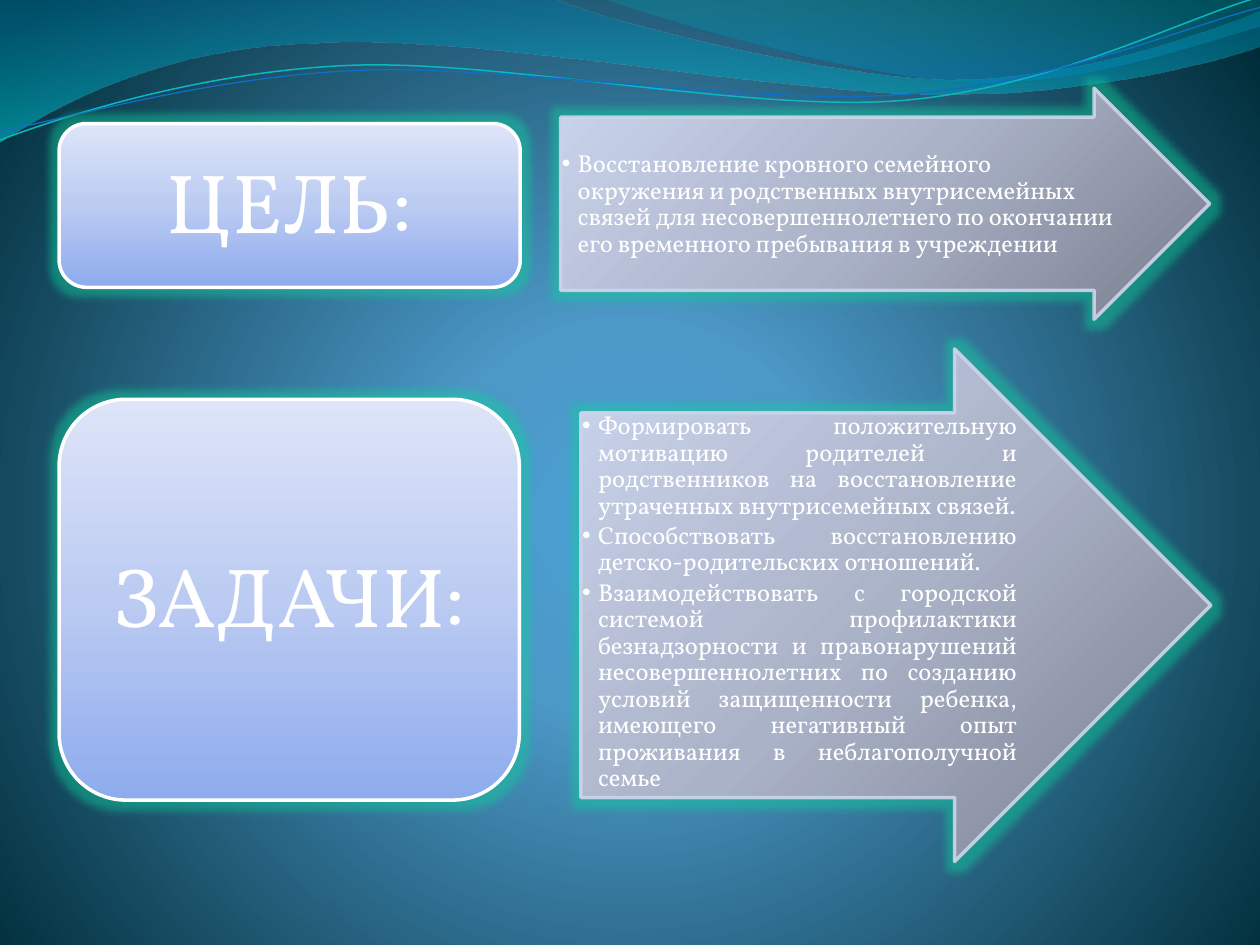
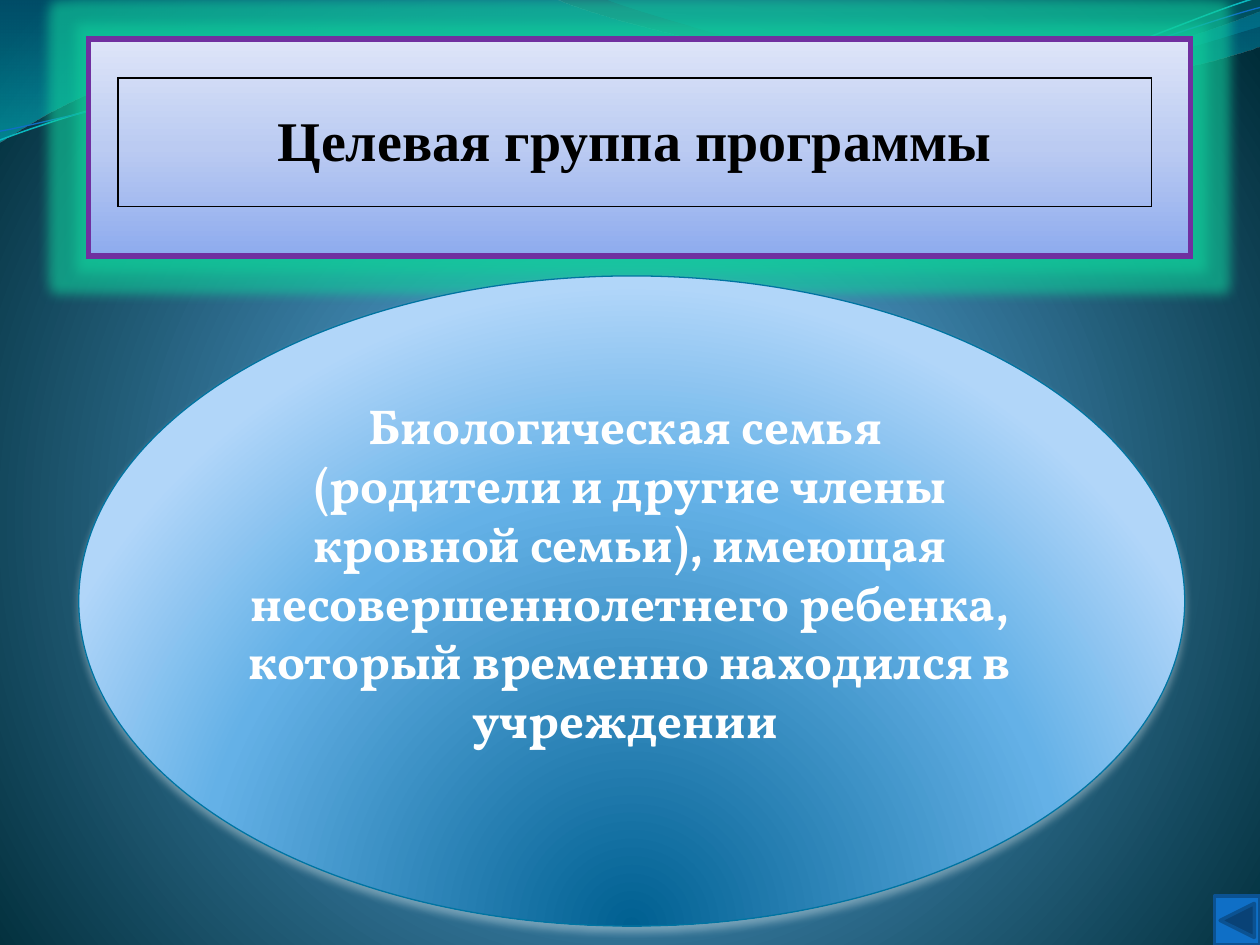
import lxml.etree
import pptx
import pptx.dml.color
import pptx.enum.shapes
import pptx.enum.text
import pptx.oxml.ns
import pptx.util

Pt = pptx.util.Pt
qn = pptx.oxml.ns.qn
KIND = pptx.enum.shapes.MSO_SHAPE
ALIGN = pptx.enum.text.PP_ALIGN
ANCHOR = pptx.enum.text.MSO_ANCHOR
HUES = {
    "white": "FFFFFF", "black": "000000", "violet": "7030A0",
    "blue": "0F6FC6", "navy": "0B5292", "teal": "0AB8BF",
    "rim": "0074A1", "edge": "CCD5EA", "glow": "10CF9B", "shade": "C8DCE4",
    "sky": "4AA0D6", "mid": "4C98C7", "night": "002C38",
    "aqua": "00C6CF", "sea": "00A1A9", "wave": "008BBF",
    "card": "8EABEE", "soft": "BBCBF2", "pale": "DEE5F8",
    "slate": "787D8C", "grey": "AAB2C7", "mist": "CAD4ED",
    "deep": "006091", "azure": "64B1E7", "light": "B1D6F9",
}
FONT = "Vollkorn"
CARD = [(0, "card"), (50, "soft"), (100, "pale")]
STEEL = [(0, "slate"), (50, "grey"), (100, "mist")]
BANDS = [
    ([(0, 0), (317, -0.7), (343, 12, 478, 45.4, 546, 45.4),
      (614, 45.4, 690, 18.7, 720, 6.5), (720.7, 26),
      (708, 32, 626, 54.7, 537, 54), (447, 54, 275, 20, 185, 24.5),
      (93, 26, 33, 60, -0.7, 81.4)],
     [(0, "rim", 45), (100, "aqua", 55)]),
    ([(345, -0.7), (366, 8, 491, 44.6, 553.7, 46.8),
      (616, 49.7, 692, 23, 720, 15), (720, 0)],
     [(0, "sea", 30), (80, "wave", 45)]),
]
LINES = [
    ([(0, 80), (34.6, 67, 113.8, 41, 199.4, 37.4),
      (284.4, 33.8, 427, 64, 513.4, 57.6),
      (599.8, 51, 675.4, 10.8, 718.6, -1.4)], "teal", 0.85),
    ([(0, 75), (33.8, 69, 118, 44, 203.8, 40.3),
      (290, 36.7, 430, 60.5, 516, 54), (602, 48.2, 677.5, 15, 720, 4.3)],
     "blue", 0.75),
]


def color(name):
    return pptx.dml.color.RGBColor.from_string(HUES[name])


def node(host, tag, **attrs):
    return lxml.etree.SubElement(
        host, qn(tag), {key: str(val) for key, val in attrs.items()})


def tint(host, name, alpha=100):
    hue = node(host, "a:srgbClr", val=HUES[name])
    if alpha < 100:
        node(hue, "a:alpha", val=alpha * 1000)


def blend(host, stops, angle=None, focus=None):
    old = host.find(qn("a:noFill"))
    grad = node(host, "a:gradFill", rotWithShape=1)
    items = node(grad, "a:gsLst")
    for pos, *hue in stops:
        tint(node(items, "a:gs", pos=pos * 1000), *hue)
    if focus:
        ring = node(grad, "a:path", path="circle")
        sides = {key: val * 1000 for key, val in zip("ltrb", focus)}
        node(ring, "a:fillToRect", **sides)
    else:
        node(grad, "a:lin", ang=angle * 60000, scaled=0)
    host.replace(old, grad)


def curve(slide, steps, close):
    dots = [(Pt(step[i]), Pt(step[i + 1]))
            for step in steps for i in range(0, len(step), 2)]
    pen = slide.shapes.build_freeform(*dots[0])
    pen.add_line_segments(dots[1:], close=close)
    shape = pen.convert_to_shape()
    parts = iter(list(shape._element.spPr.iter(qn("a:lnTo"))))
    for step in steps[1:]:
        part = next(parts)
        if len(step) == 6:
            bend = lxml.etree.Element(qn("a:cubicBezTo"))
            part.addprevious(bend)
            for piece in (part, next(parts), next(parts)):
                bend.append(piece[0])
                piece.getparent().remove(piece)
    shape.shadow.inherit = False
    shape.fill.background()
    return shape


def scene(deck, slide):
    master = deck.slide_master
    master.background.fill.background()
    base = master._element.cSld.find(qn("p:bg")).find(qn("p:bgPr"))
    blend(base, [(0, "sky"), (25, "mid"), (100, "night")],
          focus=(10, 110, 10, 100))
    waves = []
    for steps, stops in BANDS:
        band = curve(slide, steps, True)
        band.line.fill.background()
        blend(band._element.spPr, stops, angle=90)
        waves.append(band)
    for steps, hue, width in LINES:
        wave = curve(slide, steps, False)
        wave.line.color.rgb = color(hue)
        wave.line.width = Pt(width)
        waves.append(wave)
    for i, wave in enumerate(waves, 20):
        wave._element.nvSpPr.cNvPr.set("id", str(i))
        master.shapes._spTree.append(wave._element)


def block(slide, kind, area, line, width, fill=None, stops=None, angle=None,
          focus=None, glow=0, alpha=45):
    shape = slide.shapes.add_shape(kind, *map(Pt, area))
    shape.shadow.inherit = False
    shape.line.color.rgb = color(line)
    shape.line.width = Pt(width)
    if fill:
        shape.fill.solid()
        shape.fill.fore_color.rgb = color(fill)
    else:
        shape.fill.background()
        blend(shape._element.spPr, stops, angle, focus)
    if glow:
        effects = shape._element.spPr.find(qn("a:effectLst"))
        tint(node(effects, "a:glow", rad=Pt(glow)), "glow", alpha)
    return shape


def write(frame, lines, size, hue="white", font=FONT, bold=False,
          align=ALIGN.CENTER, space=1.0, after=0, bullet=False):
    for i, line in enumerate(lines):
        para = frame.add_paragraph() if i else frame.paragraphs[0]
        para.alignment = align
        para.line_spacing = space
        para.space_before = Pt(0)
        para.space_after = Pt(after)
        run = para.add_run()
        run.text = line
        run.font.size = Pt(size)
        run.font.name = font
        run.font.bold = bold
        run.font.color.rgb = color(hue)
        if bullet:
            props = para._p.get_or_add_pPr()
            props.set("marL", str(Pt(9)))
            props.set("indent", str(-Pt(9)))
            node(props, "a:buChar", char="•")


def inset(frame, left, top, right, bottom):
    frame.word_wrap = True
    frame.auto_size = pptx.enum.text.MSO_AUTO_SIZE.NONE
    frame.margin_left, frame.margin_top = Pt(left), Pt(top)
    frame.margin_right, frame.margin_bottom = Pt(right), Pt(bottom)


def label(slide, area, text):
    card = block(slide, KIND.ROUNDED_RECTANGLE, area, "white", 2,
                 stops=CARD, angle=270, glow=9)
    frame = card.text_frame
    inset(frame, 14, 7.5, 14.5, 7)
    frame.vertical_anchor = ANCHOR.MIDDLE
    write(frame, [text], 48, space=0.9)


def arrow(slide, area, **fill):
    shape = block(slide, KIND.RIGHT_ARROW, area, "edge", 2, stops=STEEL,
                  glow=9, **fill)
    shape.adjustments[0] = 0.75
    shape.adjustments[1] = 0.5
    edge = shape._element.spPr.find(qn("a:ln")).find(qn("a:solidFill"))
    node(edge[0], "a:alpha", val=90000)


def points(slide, index, area, lines, align, top=1):
    holder = slide.placeholders[index]
    holder.left, holder.top, holder.width, holder.height = map(Pt, area)
    slide.shapes._spTree.append(holder._element)
    inset(holder.text_frame, 0.7, top, 0.7, 0.7)
    holder.text_frame.vertical_anchor = ANCHOR.TOP
    write(holder.text_frame, lines, 14, align=align, space=0.9, after=2.1,
          bullet=True)


def banner(slide, area, text):
    table = slide.shapes.add_table(1, 1, *map(Pt, area)).table
    table.first_row = table.horz_banding = False
    cell = table.cell(0, 0)
    cell.vertical_anchor = ANCHOR.MIDDLE
    cell.margin_left = cell.margin_right = Pt(5)
    cell.margin_top = cell.margin_bottom = Pt(0)
    props = cell._tc.get_or_add_tcPr()
    for side in ("a:lnL", "a:lnR", "a:lnT", "a:lnB"):
        tint(node(node(props, side, w=Pt(1)), "a:solidFill"), "black")
    cell.fill.background()
    write(cell.text_frame, [text], 32, hue="black", font="Times New Roman",
          bold=True)


def aims(deck):
    slide = deck.slides.add_slide(deck.slide_layouts[3])
    title = slide.shapes.title._element
    title.getparent().remove(title)
    scene(deck, slide)
    arrow(slide, (320.4, 50.4, 370.8, 132), focus=(100, 100, 0, 0))
    points(slide, 1, (320.4, 67, 321, 99), [
        "Восстановление кровного семейного окружения и родственных "
        "внутрисемейных связей для несовершеннолетнего по окончании его "
        "временного пребывания в учреждении"], ALIGN.LEFT, top=19.5)
    label(slide, (33.8, 70.6, 263.5, 93.6), "ЦЕЛЬ:")
    arrow(slide, (332, 199.4, 360, 293), angle=225)
    points(slide, 2, (332, 235.4, 250, 220), [
        "Формировать положительную мотивацию родителей и родственников на "
        "восстановление утраченных внутрисемейных связей.",
        "Способствовать восстановлению детско-родительских отношений.",
        "Взаимодействовать с городской системой профилактики безнадзорности "
        "и правонарушений несовершеннолетних по созданию условий "
        "защищенности ребенка, имеющего негативный опыт проживания в "
        "неблагополучной семье"], ALIGN.JUSTIFY)
    label(slide, (33.8, 228.2, 263, 229), "ЗАДАЧИ:")


def target(deck):
    slide = deck.slides.add_slide(deck.slide_layouts[6])
    frame = block(slide, KIND.RECTANGLE, (50.4, 22.3, 630, 124), "violet", 3,
                  stops=CARD, angle=270, glow=14, alpha=60)
    node(frame._element.spPr.find(qn("a:ln")), "a:miter", lim=800000)
    block(slide, KIND.ACTION_BUTTON_BACK_OR_PREVIOUS, (694, 512, 26, 28),
          "navy", 2, fill="blue")
    banner(slide, (67.5, 44.6, 590.4, 73.4), "Целевая группа программы")
    oval = block(slide, KIND.OVAL, (45, 157.7, 632, 371.5), "rim", 0.75,
                 stops=[(0, "deep"), (68, "azure"), (100, "light")],
                 focus=(50, 130, 50, -30))
    effects = oval._element.spPr.find(qn("a:effectLst"))
    shade = node(effects, "a:outerShdw", blurRad=Pt(4.5), dist=Pt(3),
                 dir=90 * 60000, rotWithShape=0)
    tint(shade, "shade", 48)
    area = (123.8, 222.5, 472.3, 211)
    words = slide.shapes.add_textbox(*map(Pt, area)).text_frame
    inset(words, 7.2, 3.6, 7.2, 3.6)
    write(words, [
        "Биологическая семья ",
        "(родители и другие члены кровной семьи), имеющая "
        "несовершеннолетнего ребенка, который временно находился в "
        "учреждении "], 28, bold=True)


def main():
    deck = pptx.Presentation()
    deck.slide_width, deck.slide_height = Pt(720), Pt(540)
    aims(deck)
    target(deck)
    deck.save("out.pptx")


if __name__ == "__main__":
    main()
